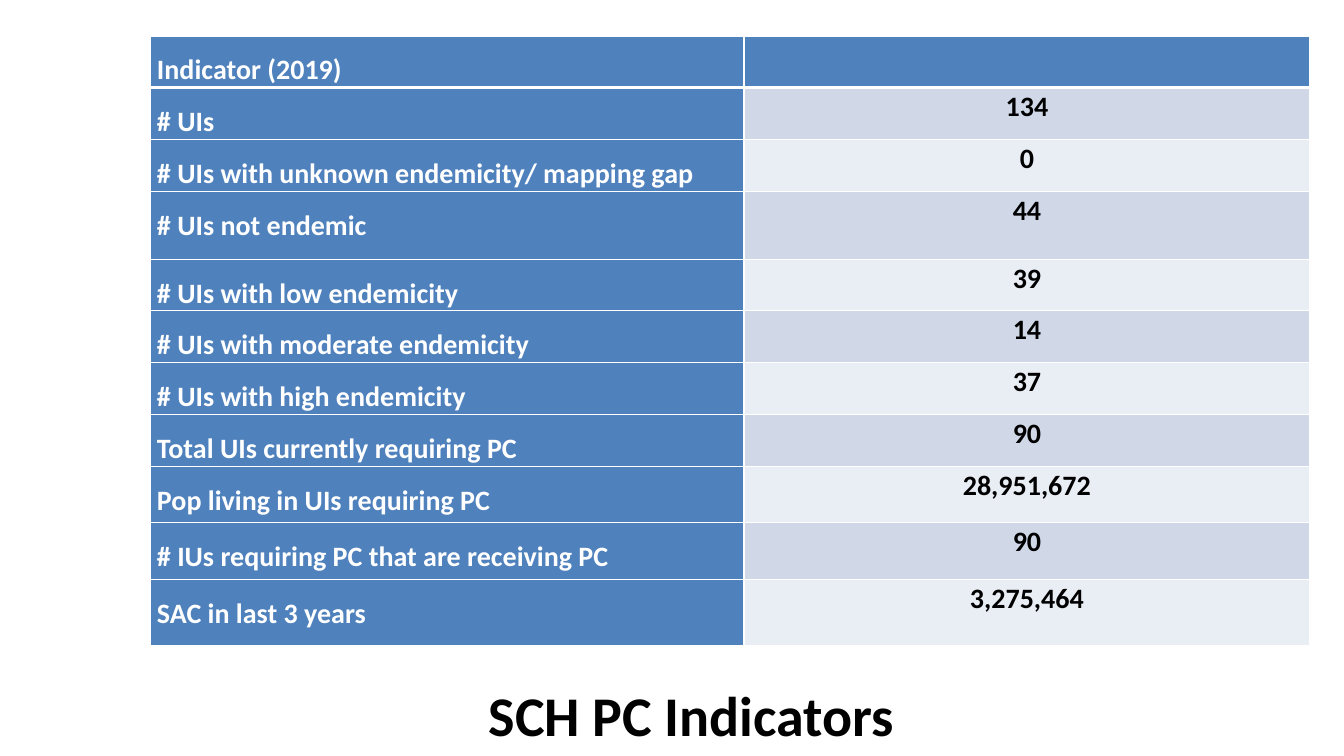
import pptx
import pptx.dml.color
import pptx.enum.text
import pptx.oxml
import pptx.oxml.ns
import pptx.util

TITLE = "SCH PC Indicators"

# Label, value, row height in px
INDICATORS = [
    ("Indicator (2019)", "", 51),
    ("# UIs", "134", 52),
    ("# UIs with unknown endemicity/ mapping gap", "0", 52),
    ("# UIs not endemic", "44", 68),
    ("# UIs with low endemicity", "39", 51),
    ("# UIs with moderate endemicity", "14", 52),
    ("# UIs with high endemicity", "37", 52),
    ("Total UIs currently requiring PC", "90", 52),
    ("Pop living in UIs requiring PC", "28,951,672", 56),
    ("# IUs requiring PC that are receiving PC", "90", 57),
    ("SAC in last 3 years", "3,275,464", 66),
]

THEME = {
    "font": "Calibri",
    "title_size": 40,
    "cell_size": 20,
    "text": "000000",
    "white": "FFFFFF",
    "blue": "4F81BD",
    "bands": ("D0D8E8", "E9EDF4"),
}

# Layout in px
PAGE_SIZE = (1344, 756)
TABLE_LEFT, TABLE_TOP = 150, 36
COLUMN_WIDTHS = (594, 566)
CELL_MARGIN = 7
TITLE_BOX = (112, 674, 1159, 80)
EMU_PER_PX = 9071.43

ALIGN = pptx.enum.text.PP_ALIGN
ANCHOR = pptx.enum.text.MSO_ANCHOR


def px(length):
    return pptx.util.Emu(round(length * EMU_PER_PX))


def color(name):
    return pptx.dml.color.RGBColor.from_string(name)


def write(para, text, size, text_color, align, spacing=None):
    para.text = text
    para.alignment = align
    para.line_spacing = spacing
    para.font.name = THEME["font"]
    para.font.size = pptx.util.Pt(size)
    para.font.bold = True
    para.font.color.rgb = color(text_color)


def set_borders(cell, widths):
    """Draw white borders; widths in points for left, right, top, bottom."""
    properties = cell._tc.get_or_add_tcPr()
    for index, (side, width) in enumerate(zip("LRTB", widths)):
        border = pptx.oxml.parse_xml(
            f'<a:ln{side} {pptx.oxml.ns.nsdecls("a")} w="{pptx.util.Pt(width)}">'
            f'<a:solidFill><a:srgbClr val="{THEME["white"]}"/></a:solidFill>'
            f'</a:ln{side}>')
        properties.insert(index, border)


def add_indicator_table(page):
    heights = [height for _, _, height in INDICATORS]
    table = page.shapes.add_table(
        len(INDICATORS), len(COLUMN_WIDTHS), px(TABLE_LEFT), px(TABLE_TOP),
        px(sum(COLUMN_WIDTHS)), px(sum(heights))).table
    for column, width in zip(table.columns, COLUMN_WIDTHS):
        column.width = px(width)

    for row, (label, value, height) in enumerate(INDICATORS):
        table.rows[row].height = px(height)
        for column, text in enumerate((label, value)):
            cell = table.cell(row, column)
            cell.margin_left = cell.margin_right = px(CELL_MARGIN)
            cell.margin_top = cell.margin_bottom = 0
            is_value = row > 0 and column == 1
            cell.fill.solid()
            cell.fill.fore_color.rgb = color(
                THEME["bands"][(row - 1) % 2] if is_value else THEME["blue"])
            write(cell.text_frame.paragraphs[0], text, THEME["cell_size"],
                  THEME["text"] if is_value else THEME["white"],
                  ALIGN.CENTER if is_value else ALIGN.LEFT,
                  1.07 if is_value else 1.5)
            # The rule under the header is heavier
            set_borders(cell, (1, 1, 3 if row == 1 else 1, 3 if row == 0 else 1))


def add_title(page):
    box = page.shapes.add_textbox(*map(px, TITLE_BOX))
    frame = box.text_frame
    frame.word_wrap = True
    frame.vertical_anchor = ANCHOR.MIDDLE
    write(frame.paragraphs[0], TITLE, THEME["title_size"], THEME["text"], ALIGN.CENTER)


def main():
    deck = pptx.Presentation()
    deck.slide_width, deck.slide_height = map(px, PAGE_SIZE)
    page = deck.slides.add_slide(deck.slide_layouts[6])
    add_indicator_table(page)
    add_title(page)
    deck.save("out.pptx")


if __name__ == "__main__":
    main()
